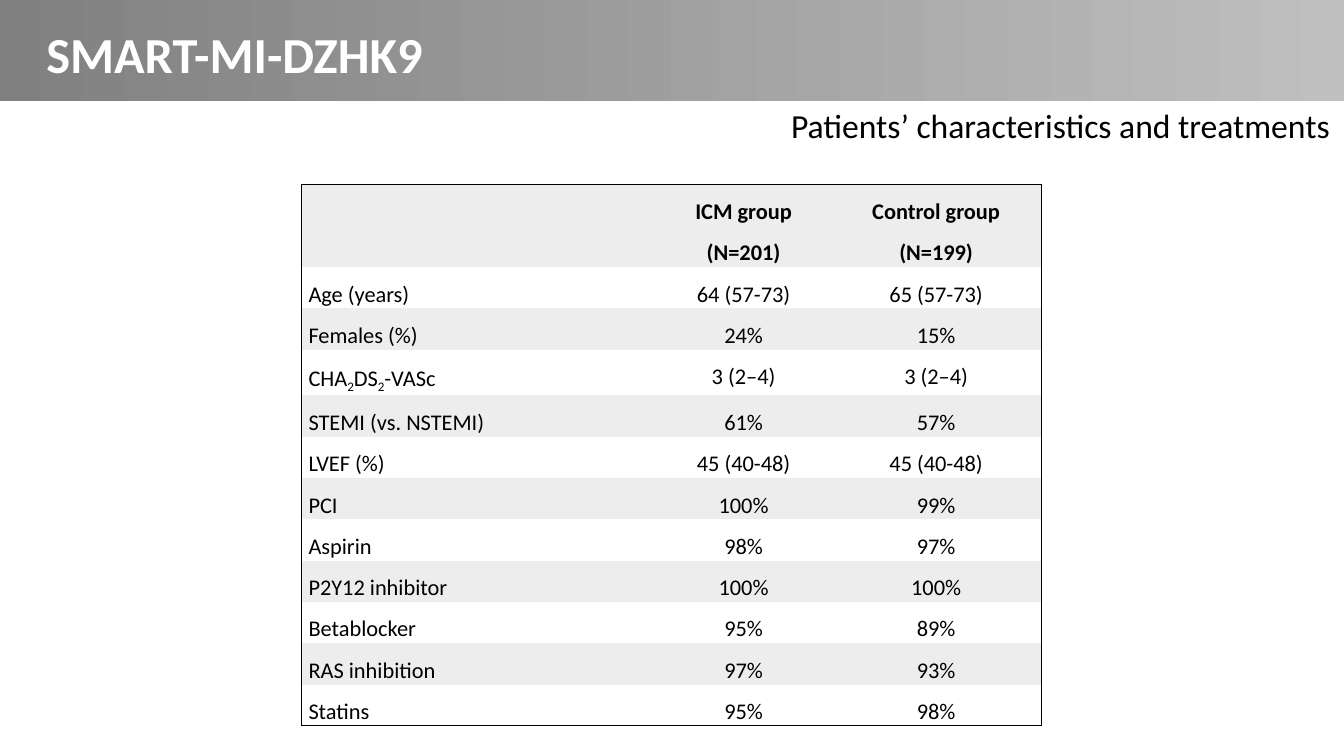
from dataclasses import dataclass

from lxml import etree
from pptx import Presentation
from pptx import util as u
from pptx.dml.color import RGBColor
from pptx.enum import shapes, text
from pptx.oxml import ns

EMU_PER_PX = 9144
FONT = "Calibri"
BLACK = "000000"
SHADE = "EDEDED"
COLUMN_WIDTHS = (352, 173, 209)
HEADER_HEIGHT = 82
ROW_HEIGHT = 41
SUBSCRIPT_MARK = "|"


@dataclass(frozen=True)
class Characteristic:
    label: str
    icm: str
    control: str


@dataclass(frozen=True)
class Caption:
    content: str
    box: tuple[int, int, int, int]
    size: int
    color: str
    bold: bool
    align: text.PP_ALIGN
    margins: tuple[int, int]
    wrap: bool


ROWS = (
    Characteristic("", "ICM group (N=201)", "Control group (N=199)"),
    Characteristic("Age (years)", "64 (57-73)", "65 (57-73)"),
    Characteristic("Females (%)", "24%", "15%"),
    Characteristic("CHA|2|DS|2|-VASc", "3 (2–4)", "3 (2–4)"),
    Characteristic("STEMI (vs. NSTEMI)", "61%", "57%"),
    Characteristic("LVEF (%)", "45 (40-48)", "45 (40-48)"),
    Characteristic("PCI", "100%", "99%"),
    Characteristic("Aspirin", "98%", "97%"),
    Characteristic("P2Y12 inhibitor", "100%", "100%"),
    Characteristic("Betablocker", "95%", "89%"),
    Characteristic("RAS inhibition", "97%", "93%"),
    Characteristic("Statins", "95%", "98%"),
)

CAPTIONS = (
    Caption("SMART-MI-DZHK9", (46, 23, 1022, 61), 36, "FFFFFF", True,
            text.PP_ALIGN.LEFT, (0, 0), True),
    Caption("Patients’ characteristics and treatments", (768, 99, 561, 50), 24, BLACK, False,
            text.PP_ALIGN.RIGHT, (10, 5), False),
)


def px(length: int) -> u.Emu:
    return u.Emu(length * EMU_PER_PX)


def rgb(color: str) -> RGBColor:
    return RGBColor.from_string(color)


def style_font(font, size: int, color: str, bold: bool) -> None:
    font.name = FONT
    font.size = u.Pt(size)
    font.bold = bold
    font.color.rgb = rgb(color)


def set_borders(cell, outer_sides: dict[str, bool]) -> None:
    properties = cell._tc.get_or_add_tcPr()
    for side, is_outer in outer_sides.items():
        line = etree.SubElement(properties, ns.qn(f"a:ln{side}"), w=str(u.Pt(1)))
        if is_outer:
            fill = etree.SubElement(line, ns.qn("a:solidFill"))
            etree.SubElement(fill, ns.qn("a:srgbClr"), val=BLACK)
        else:
            etree.SubElement(line, ns.qn("a:noFill"))


def fill_cell(cell, content: str, align: text.PP_ALIGN, bold: bool, shaded: bool) -> None:
    cell.margin_left = cell.margin_right = px(7)
    cell.margin_top = cell.margin_bottom = 0
    if shaded:
        cell.fill.solid()
        cell.fill.fore_color.rgb = rgb(SHADE)
    else:
        cell.fill.background()
    paragraph = cell.text_frame.paragraphs[0]
    paragraph.alignment = align
    paragraph.line_spacing = 1.5
    style_font(paragraph.font, 16, BLACK, bold)
    if not content:
        return
    for index, part in enumerate(content.split(SUBSCRIPT_MARK)):
        run = paragraph.add_run()
        run.text = part
        style_font(run.font, 16, BLACK, bold)
        if index % 2:
            run._r.get_or_add_rPr().set("baseline", "-25000")


def add_characteristics_table(slide) -> None:
    last_row, last_column = len(ROWS) - 1, len(COLUMN_WIDTHS) - 1
    height = HEADER_HEIGHT + last_row * ROW_HEIGHT
    table = slide.shapes.add_table(
        len(ROWS), len(COLUMN_WIDTHS), px(299), px(183), px(sum(COLUMN_WIDTHS)), px(height)
    ).table
    table.first_row = table.horz_banding = False
    for column, width in zip(table.columns, COLUMN_WIDTHS):
        column.width = px(width)
    for row_index, row in enumerate(ROWS):
        table.rows[row_index].height = px(ROW_HEIGHT if row_index else HEADER_HEIGHT)
        for column_index, content in enumerate((row.label, row.icm, row.control)):
            cell = table.cell(row_index, column_index)
            set_borders(cell, {
                "L": column_index == 0,
                "R": column_index == last_column,
                "T": row_index == 0,
                "B": row_index == last_row,
            })
            align = text.PP_ALIGN.CENTER if column_index else text.PP_ALIGN.LEFT
            fill_cell(cell, content, align, row_index == 0, row_index % 2 == 0)


def add_title_band(slide) -> None:
    band = slide.shapes.add_shape(
        shapes.MSO_SHAPE.RECTANGLE, px(-1), px(-1), px(1334), px(101)
    )
    band.shadow.inherit = False
    band.line.fill.background()
    band.fill.gradient()
    band.fill.gradient_angle = 0
    for stop, color in zip(band.fill.gradient_stops, ("808080", "BFBFBF")):
        stop.color.rgb = rgb(color)


def add_caption(slide, caption: Caption) -> None:
    frame = slide.shapes.add_textbox(*map(px, caption.box)).text_frame
    frame.word_wrap = caption.wrap
    frame.auto_size = text.MSO_AUTO_SIZE.SHAPE_TO_FIT_TEXT
    horizontal, vertical = caption.margins
    frame.margin_left = frame.margin_right = px(horizontal)
    frame.margin_top = frame.margin_bottom = px(vertical)
    frame.text = caption.content
    paragraph = frame.paragraphs[0]
    paragraph.alignment = caption.align
    style_font(paragraph.runs[0].font, caption.size, caption.color, caption.bold)


def main() -> None:
    presentation = Presentation()
    presentation.slide_width, presentation.slide_height = px(1333), px(750)
    slide = presentation.slides.add_slide(presentation.slide_layouts[6])
    add_characteristics_table(slide)
    add_title_band(slide)
    for caption in CAPTIONS:
        add_caption(slide, caption)
    presentation.save("out.pptx")


if __name__ == "__main__":
    main()
